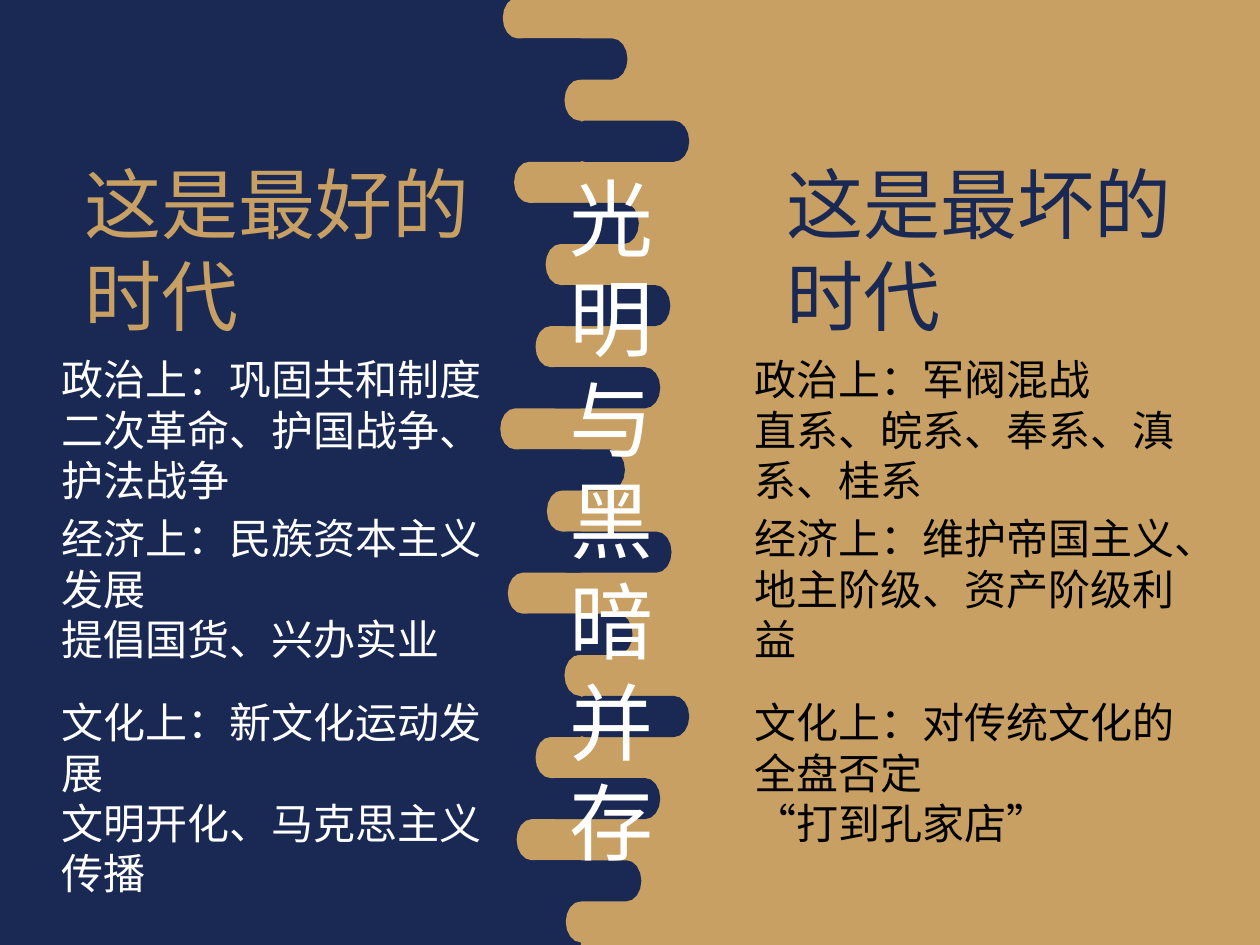
import math
from dataclasses import dataclass

from lxml import etree
from pptx import Presentation
from pptx import util as u
from pptx.dml.color import RGBColor
from pptx.enum import shapes, text
from pptx.oxml.ns import qn

WIDTH, HEIGHT = 10, 7.5
ROWS = 23
ROW = HEIGHT / ROWS
TOP = -0.02


@dataclass(frozen=True)
class Theme:
    navy: str = "1A2954"
    gold: str = "C8A063"
    white: str = "FFFFFF"
    black: str = "000000"
    body_font: str = "Noto Sans CJK SC"
    spine_font: str = "Noto Sans CJK JP"
    body: int = 24
    heading: int = 44
    spine: int = 48
    leading: float = 1.2


THEME = Theme()


@dataclass(frozen=True)
class Era:
    """One half of the slide: its heading and three themes."""
    left: float
    heading_left: float
    heading_width: float
    heading: str
    heading_color: str
    body_color: str
    themes: tuple[tuple[str, ...], ...]


ERAS = (
    Era(0.39, 0.57, 3.41, "这是最好的时代", THEME.gold, THEME.white, (
        ("政治上：巩固共和制度", "二次革命、护国战争、护法战争"),
        ("经济上：民族资本主义发展", "提倡国货、兴办实业"),
        ("文化上：新文化运动发展", "文明开化、马克思主义传播"))),
    Era(5.89, 6.14, 3.51, "这是最坏的时代", THEME.navy, THEME.black, (
        ("政治上：军阀混战", "直系、皖系、奉系、滇系、桂系"),
        ("经济上：维护帝国主义、地主阶级、资产阶级利益",),
        ("文化上：对传统文化的全盘否定", "“打到孔家店”"))),
)
THEME_TOPS = (2.76, 4.02, 5.48)
THEME_HEIGHTS = (1.31, 1.31, 1.72)
THEME_WIDTH = 3.69

# Left end of each gold finger; a navy one follows in the next row.
FINGERS = (3.99, 4.48, 4.08, 4.33, 4.25, 3.97, 4.34, 4.03, 4.48, 4.25, 4.10, 4.49)
FINGER_WIDTH, LAST_FINGER_WIDTH = 0.95, 0.85
NAVY_SHIFT = 0.04
CAP = 0.12
CAP_STEPS = 8


def paint(shape, color: str) -> None:
    shape.fill.solid()
    shape.fill.fore_color.rgb = RGBColor.from_string(color)
    shape.line.fill.background()
    shape.shadow.inherit = False


def add_panel(slide, left: float, width: float, color: str):
    panel = slide.shapes.add_shape(
        shapes.MSO_SHAPE.RECTANGLE, u.Inches(left), u.Inches(TOP),
        u.Inches(width), u.Inches(HEIGHT - TOP))
    paint(panel, color)
    return panel


def add_finger(slide, left: float, row: int, width: float, color: str) -> None:
    """Draw a bar one row high with half-elliptical ends."""
    middle = TOP + (row + 0.5) * ROW
    points = []
    for center, start in ((left + width - CAP, -90), (left + CAP, 90)):
        for step in range(CAP_STEPS + 1):
            angle = math.radians(start + 180 * step / CAP_STEPS)
            points.append((u.Inches(center + CAP * math.cos(angle)),
                           u.Inches(middle + ROW / 2 * math.sin(angle))))
    outline = slide.shapes.build_freeform(*points[0])
    outline.add_line_segments(points[1:], close=True)
    paint(outline.convert_to_shape(), color)


def add_text(slide, left: float, top: float, width: float, height: float,
             lines: tuple[str, ...], size: int, color: str,
             font: str = THEME.body_font) -> None:
    box = slide.shapes.add_textbox(*map(u.Inches, (left, top, width, height)))
    frame = box.text_frame
    frame.word_wrap = True
    frame.text = "\n".join(lines)
    for paragraph in frame.paragraphs:
        paragraph.alignment = text.PP_ALIGN.LEFT
        paragraph.line_spacing = u.Pt(size * THEME.leading)
        paragraph.font.size = u.Pt(size)
        paragraph.font.color.rgb = RGBColor.from_string(color)
        paragraph.font.name = font
        properties = paragraph.font._element
        etree.SubElement(properties, qn("a:ea")).set("typeface", font)


def add_era(slide, era: Era) -> None:
    add_text(slide, era.heading_left, 1.19, era.heading_width, 1.58,
             (era.heading,), THEME.heading, era.heading_color)
    for top, height, lines in zip(THEME_TOPS, THEME_HEIGHTS, era.themes):
        add_text(slide, era.left, top, THEME_WIDTH, height, lines,
                 THEME.body, era.body_color)


def main() -> None:
    prs = Presentation()
    prs.slide_width, prs.slide_height = u.Inches(WIDTH), u.Inches(HEIGHT)
    slide = prs.slides.add_slide(prs.slide_layouts[6])

    night = add_panel(slide, -0.1, WIDTH + 0.1, THEME.navy)
    night.line.color.rgb = RGBColor.from_string(THEME.navy)
    night.line.width = u.Pt(2)
    add_panel(slide, 4.61, WIDTH - 4.61, THEME.gold)

    for index, left in enumerate(FINGERS[:-1]):
        add_finger(slide, left, 2 * index, FINGER_WIDTH, THEME.gold)
    add_finger(slide, FINGERS[-1], ROWS - 1, LAST_FINGER_WIDTH, THEME.gold)
    for index, left in enumerate(FINGERS[:-1]):
        add_finger(slide, left + NAVY_SHIFT, 2 * index + 1, FINGER_WIDTH, THEME.navy)

    for era in ERAS:
        add_era(slide, era)
    add_text(slide, 4.42, 1.27, 0.66, 5.76, tuple("光明与黑暗并存"),
             THEME.spine, THEME.white, THEME.spine_font)
    prs.save("out.pptx")


if __name__ == "__main__":
    main()
